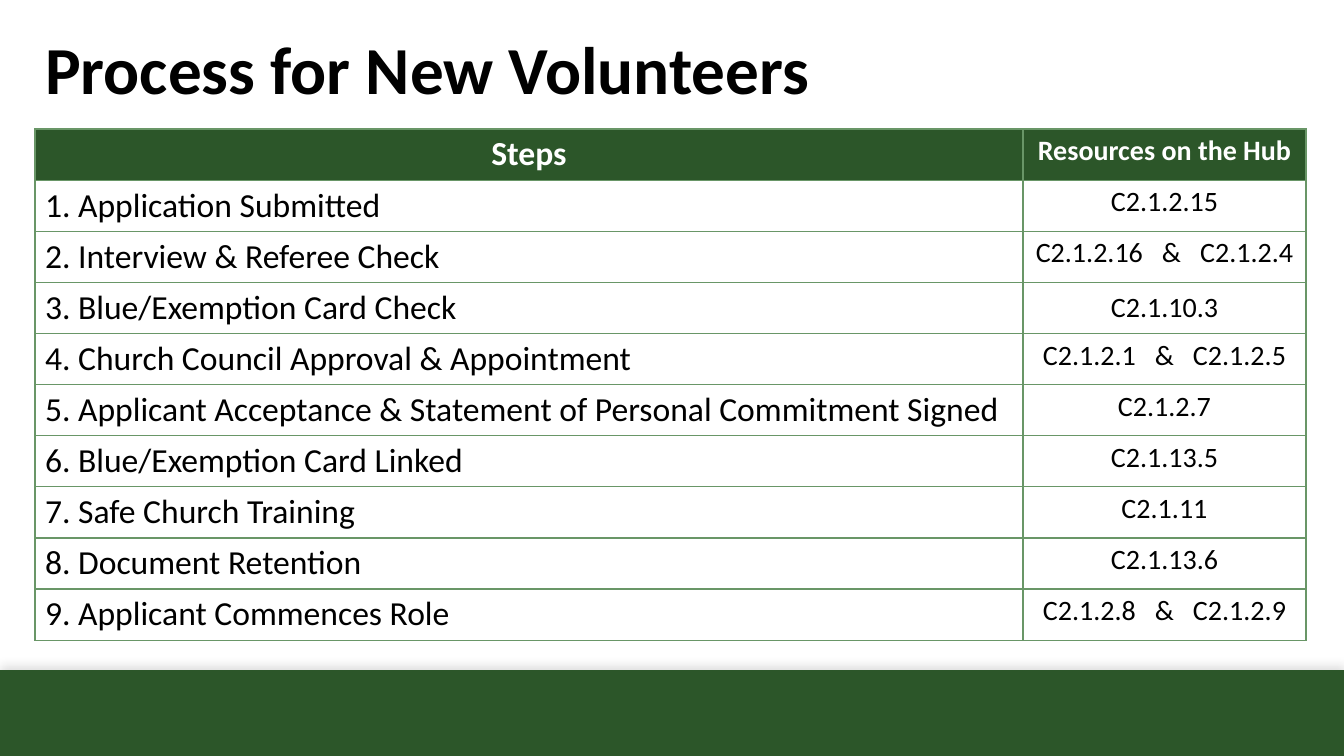
from typing import NamedTuple

from lxml.etree import SubElement as Sub
from pptx import Presentation
from pptx.dml.color import RGBColor
from pptx.enum.shapes import MSO_SHAPE as Shape
from pptx.enum.text import MSO_ANCHOR as Anchor, PP_ALIGN as Align
from pptx.oxml.ns import qn
from pptx.util import Emu, Pt

WIDTH, HEIGHT = 1344, 756
GREEN, EDGE, WHITE, BLACK = "2C5629", "699667", "FFFFFF", "000000"


class Step(NamedTuple):
    name: str
    codes: str
    anchor: Anchor = Anchor.TOP


STEPS = [
    Step("Application Submitted", "C2.1.2.15"),
    Step("Interview & Referee Check", "C2.1.2.16 & C2.1.2.4"),
    Step("Blue/Exemption Card Check", "C2.1.10.3", Anchor.MIDDLE),
    Step("Church Council Approval & Appointment", "C2.1.2.1 & C2.1.2.5"),
    Step("Applicant Acceptance & Statement of Personal Commitment Signed",
         "C2.1.2.7"),
    Step("Blue/Exemption Card Linked", "C2.1.13.5"),
    Step("Safe Church Training", "C2.1.11"),
    Step("Document Retention", "C2.1.13.6"),
    Step("Applicant Commences Role", "C2.1.2.8 & C2.1.2.9"),
]


def px(n: int) -> Emu:
    return Emu(round(n * 914400 / 100.8))


def color(code: str) -> RGBColor:
    return RGBColor.from_string(code)


def write(frame, text: str, size: int, tint: str = BLACK, bold: bool = False,
          align: Align = Align.LEFT, space: float = 1.0, gap: int = 0) -> None:
    """Write one paragraph; gap widens the room around an ampersand, in pt."""
    para = frame.paragraphs[0]
    para.alignment, para.line_spacing = align, space
    left, mark, right = text.partition(" &") if gap else (text, "", "")
    for part in filter(None, (left, mark, right)):
        run = para.add_run()
        run.text = part
        font = run.font
        font.name, font.size, font.bold = "Calibri", Pt(size), bold
        font.color.rgb = color(tint)
        if part == mark:
            font._element.set("spc", str(gap * 100))


def style(cell, fill: str = "") -> None:
    """Give a cell its four borders and its fill."""
    props = cell._tc.get_or_add_tcPr()
    for side in ("a:lnL", "a:lnR", "a:lnT", "a:lnB"):
        line = Sub(props, qn(side), w=str(Pt(1)))
        Sub(Sub(line, qn("a:solidFill")), qn("a:srgbClr"), val=EDGE)
    if fill:
        cell.fill.solid()
        cell.fill.fore_color.rgb = color(fill)
    else:
        cell.fill.background()


def add_bar(slide) -> None:
    bar = slide.shapes.add_shape(Shape.RECTANGLE, 0, px(670), px(WIDTH), px(86))
    bar.fill.solid()
    bar.fill.fore_color.rgb = color(GREEN)
    bar.line.fill.background()
    bar.shadow.inherit = False
    # Soft shadow cast upwards
    glow = Sub(bar._element.spPr.find(qn("a:effectLst")), qn("a:outerShdw"),
               blurRad=str(Pt(7)), dist=str(Pt(3)), dir="16200000",
               algn="b", rotWithShape="0")
    Sub(Sub(glow, qn("a:srgbClr"), val=BLACK), qn("a:alpha"), val="13000")


def add_title(slide) -> None:
    title = slide.shapes.title
    title.left, title.top = px(35), px(42)
    title.width, title.height = px(1159), px(62)
    frame = title.text_frame
    frame.vertical_anchor, frame.word_wrap = Anchor.MIDDLE, True
    write(frame, "Process for New Volunteers", 48, bold=True, space=0.9)


def add_steps(slide) -> None:
    count, high = len(STEPS) + 1, 51
    table = slide.shapes.add_table(count, 2, px(35), px(129), px(1271),
                                   px(count * high)).table
    table.first_row = table.horz_banding = False
    for col, wide in zip(table.columns, (988, 283)):
        col.width = px(wide)

    # Heading row
    for col, (text, size) in enumerate([("Steps", 24),
                                        ("Resources on the Hub", 20)]):
        cell = table.cell(0, col)
        style(cell, GREEN)
        write(cell.text_frame, text, size, WHITE, True, Align.CENTER)

    # One row per step
    for row, step in enumerate(STEPS, 1):
        name, codes = table.cell(row, 0), table.cell(row, 1)
        style(name)
        style(codes)
        write(name.text_frame, f"{row}. {step.name}", 24)
        write(codes.text_frame, step.codes, 20, align=Align.CENTER, gap=9)
        codes.vertical_anchor = step.anchor


def main() -> None:
    deck = Presentation()
    deck.slide_width, deck.slide_height = px(WIDTH), px(HEIGHT)
    slide = deck.slides.add_slide(deck.slide_layouts[5])
    add_bar(slide)
    add_steps(slide)
    add_title(slide)
    deck.save("out.pptx")


if __name__ == "__main__":
    main()
